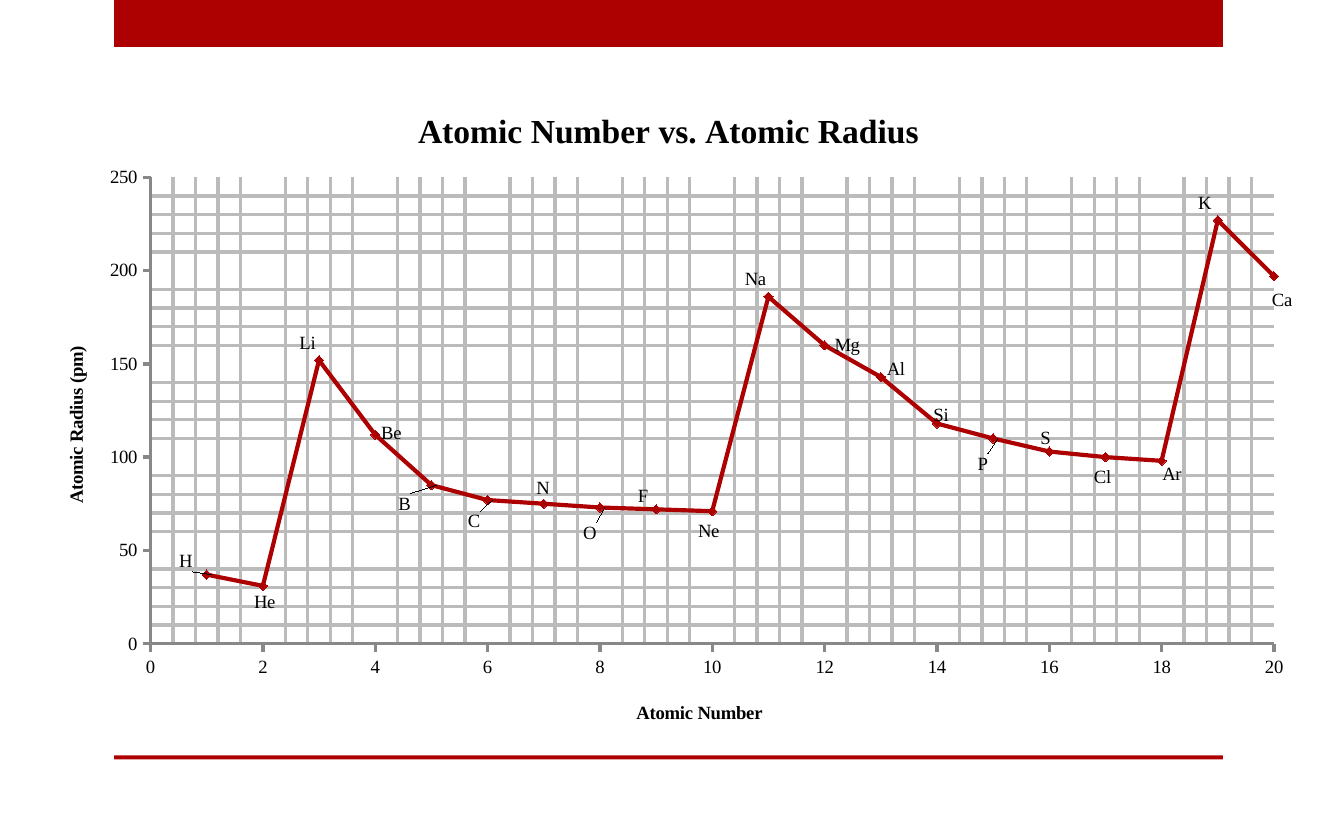
from copy import deepcopy
from dataclasses import dataclass
from typing import NamedTuple

from lxml import etree
from pptx import Presentation
from pptx.chart.data import XyChartData
from pptx.dml.color import RGBColor
from pptx.enum.chart import XL_CHART_TYPE, XL_LABEL_POSITION, XL_MARKER_STYLE, XL_TICK_MARK
from pptx.enum.shapes import MSO_SHAPE
from pptx.oxml.ns import qn
from pptx.util import Inches, Pt

RECTANGLE = MSO_SHAPE.RECTANGLE
SCATTER_LINES = XL_CHART_TYPE.XY_SCATTER_LINES
DIAMOND = XL_MARKER_STYLE.DIAMOND
LABEL_RIGHT = XL_LABEL_POSITION.RIGHT
TICK_OUTSIDE = XL_TICK_MARK.OUTSIDE
TICK_NONE = XL_TICK_MARK.NONE


@dataclass(frozen=True)
class Theme:
    accent: RGBColor = RGBColor(0xAD, 0x01, 0x01)
    ink: RGBColor = RGBColor(0, 0, 0)
    grid: RGBColor = RGBColor(0xBB, 0xBB, 0xBB)
    axis: RGBColor = RGBColor(0x88, 0x88, 0x88)
    font: str = "Times New Roman"
    title_size: int = 18
    text_size: int = 10
    axis_width: float = 1.75
    series_width: float = 2.25
    marker_size: int = 5


class Box(NamedTuple):
    left: float
    top: float
    width: float
    height: float


class Element(NamedTuple):
    """An atom, with its label's shift in inches from the right of its point."""
    symbol: str
    radius: int
    dx: float
    dy: float


class AxisSpec(NamedTuple):
    title: str
    maximum: float
    major: float
    minor: float
    title_left: float
    title_top: float
    rotation: int


THEME = Theme()
BANDS = (Box(0.85, 0, 8.25, 0.35), Box(0.85, 5.62, 8.25, 0.03))
CHART_BOX = Box(0.21, 0.62, 9.53, 4.93)
PLOT_BOX = Box(0.91, 0.7, 8.36, 3.47)  # inches inside the chart
NUMBER_AXIS = AxisSpec("Atomic Number", 20, 2, 0.4, 4.5, 4.57, 0)
RADIUS_AXIS = AxisSpec("Atomic Radius (pm)", 250, 50, 10, 0.24, 1.93, -90)
ELEMENTS = (
    Element("H", 37, -0.28, -0.10),
    Element("He", 31, -0.14, 0.12),
    Element("Li", 152, -0.22, -0.13),
    Element("Be", 112, -0.03, -0.01),
    Element("B", 85, -0.32, 0.14),
    Element("C", 77, -0.22, 0.16),
    Element("N", 75, -0.13, -0.12),
    Element("O", 73, -0.20, 0.19),
    Element("F", 72, -0.21, -0.10),
    Element("Ne", 71, -0.18, 0.15),
    Element("Na", 186, -0.25, -0.13),
    Element("Mg", 160, 0, 0),
    Element("Al", 143, -0.03, -0.06),
    Element("Si", 118, -0.10, -0.06),
    Element("P", 110, -0.19, 0.19),
    Element("S", 103, -0.14, -0.10),
    Element("Cl", 100, -0.16, 0.15),
    Element("Ar", 98, -0.07, 0.10),
    Element("K", 227, -0.22, -0.13),
    Element("Ca", 197, -0.09, 0.18),
)


def write_text(frame, text: str, *, size: int = THEME.text_size, bold: bool = False) -> None:
    run = frame.paragraphs[0].add_run()
    run.text = text
    run.font.name = THEME.font
    run.font.size = Pt(size)
    run.font.bold = bold
    run.font.color.rgb = THEME.ink


def format_line(line, color: RGBColor, width: float) -> None:
    line.color.rgb = color
    line.width = Pt(width)


def place(parent, index: int, **settings: str | float) -> None:
    """Give a chart part a manual layout, as child number index."""
    for old in parent.findall(qn("c:layout")):
        parent.remove(old)
    layout = etree.Element(qn("c:layout"))
    manual = etree.SubElement(layout, qn("c:manualLayout"))
    for name, value in settings.items():
        etree.SubElement(manual, qn(f"c:{name}")).set("val", str(value))
    parent.insert(index, layout)


def across(inches: float) -> float:
    return round(inches / CHART_BOX.width, 4)


def down(inches: float) -> float:
    return round(inches / CHART_BOX.height, 4)


def draw_band(slide, box: Box) -> None:
    band = slide.shapes.add_shape(RECTANGLE, *map(Inches, box))
    band.shadow.inherit = False
    band.fill.solid()
    band.fill.fore_color.rgb = THEME.accent
    band.line.fill.background()


def show_minor_grid(axis) -> None:
    """Style the major gridlines, hand their style to the minor ones, and drop them."""
    format_line(axis.major_gridlines.format.line, THEME.grid, THEME.axis_width)
    axis.has_minor_gridlines = True
    style = axis._element.find(qn("c:majorGridlines")).find(qn("c:spPr"))
    axis._element.find(qn("c:minorGridlines")).append(deepcopy(style))
    axis.has_major_gridlines = False


def format_axis(axis, spec: AxisSpec) -> None:
    axis.minimum_scale = 0
    axis.maximum_scale = spec.maximum
    axis.major_unit = spec.major
    axis.minor_unit = spec.minor
    axis.major_tick_mark = TICK_OUTSIDE
    axis.minor_tick_mark = TICK_NONE
    show_minor_grid(axis)
    format_line(axis.format.line, THEME.axis, THEME.axis_width)
    axis.tick_labels.number_format = "General"
    axis.tick_labels.number_format_is_linked = False
    frame = axis.axis_title.text_frame
    write_text(frame, spec.title, bold=True)
    frame._txBody.bodyPr.set("rot", str(spec.rotation * 60000))
    place(axis.axis_title._element, 1, xMode="edge", yMode="edge",
          x=across(spec.title_left), y=down(spec.title_top))


def format_series(series) -> None:
    format_line(series.format.line, THEME.accent, THEME.series_width)
    series.marker.style = DIAMOND
    series.marker.size = THEME.marker_size
    series.marker.format.fill.solid()
    series.marker.format.fill.fore_color.rgb = THEME.accent
    series.marker.format.line.fill.background()
    for index, element in enumerate(ELEMENTS):
        label = series.points[index].data_label
        write_text(label.text_frame, element.symbol)
        label.position = LABEL_RIGHT
        place(label._get_or_add_dLbl(), 1, x=across(element.dx), y=down(element.dy))


def draw_chart(slide) -> None:
    data = XyChartData()
    radii = data.add_series("")
    for number, element in enumerate(ELEMENTS, start=1):
        radii.add_data_point(number, element.radius)
    chart = slide.shapes.add_chart(SCATTER_LINES, *map(Inches, CHART_BOX), data).chart
    chart.has_legend = False
    chart.font.name = THEME.font
    chart.font.size = Pt(THEME.text_size)
    chart.font.color.rgb = THEME.ink
    write_text(chart.chart_title.text_frame, "Atomic Number vs. Atomic Radius",
               size=THEME.title_size, bold=True)
    place(chart._chartSpace.chart.plotArea, 0, layoutTarget="inner", xMode="edge", yMode="edge",
          x=across(PLOT_BOX.left), y=down(PLOT_BOX.top),
          w=across(PLOT_BOX.width), h=down(PLOT_BOX.height))
    format_axis(chart.category_axis, NUMBER_AXIS)
    format_axis(chart.value_axis, RADIUS_AXIS)
    chart.plots[0].vary_by_categories = False
    format_series(chart.plots[0].series[0])


def main() -> None:
    deck = Presentation()
    deck.slide_width, deck.slide_height = Inches(10), Inches(6.25)
    slide = deck.slides.add_slide(deck.slide_layouts[6])
    for box in BANDS:
        draw_band(slide, box)
    draw_chart(slide)
    deck.save("out.pptx")


if __name__ == "__main__":
    main()
